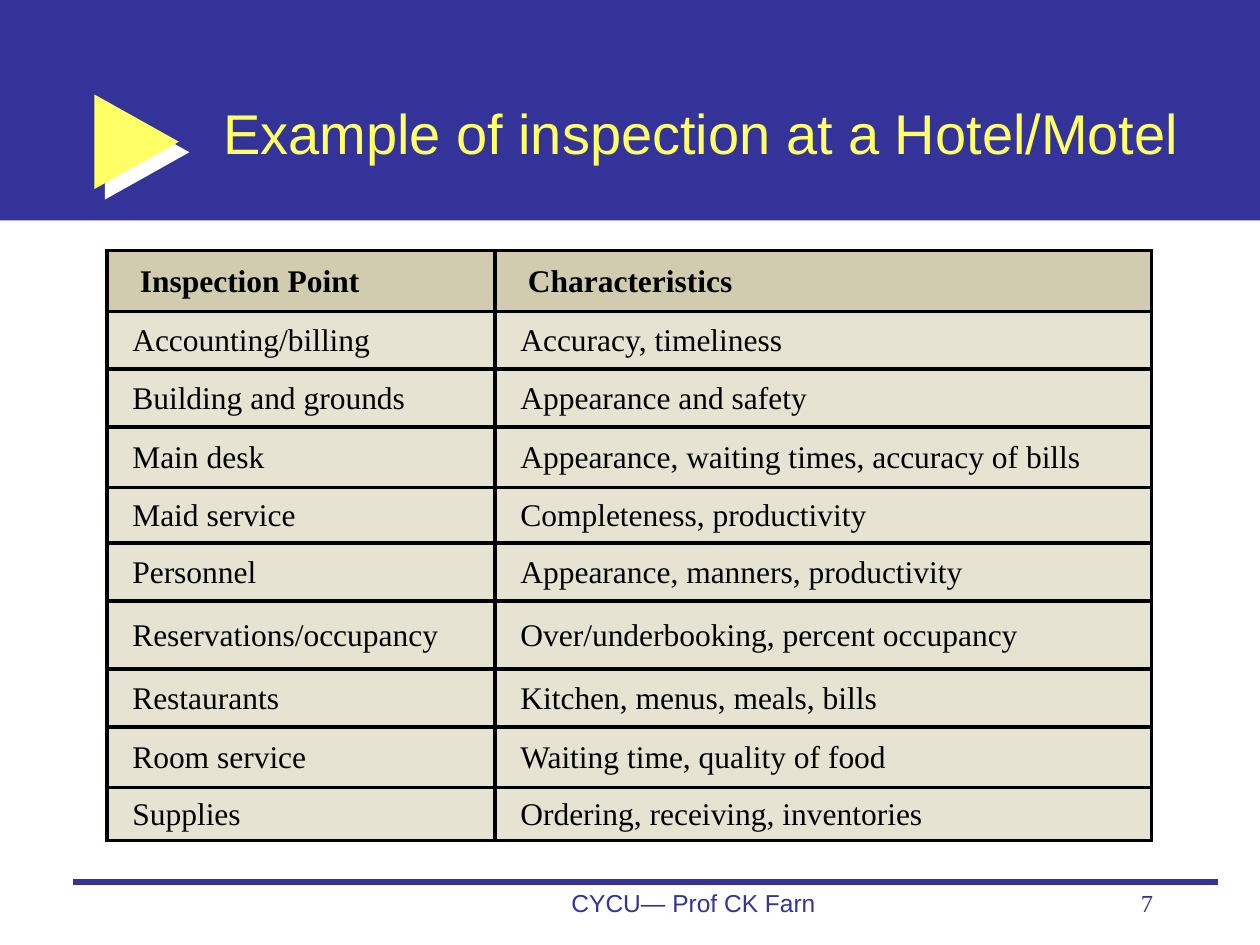
import pptx
import pptx.util
import pptx.dml.color
import pptx.enum.shapes
import pptx.enum.text
import pptx.oxml
import pptx.oxml.ns

Inches = pptx.util.Inches
Pt = pptx.util.Pt
Shape = pptx.enum.shapes.MSO_SHAPE
Align = pptx.enum.text.PP_ALIGN
Anchor = pptx.enum.text.MSO_ANCHOR

SANS, SERIF = "Arial", "Times New Roman"
COLORS = {
    "blue": "333399",
    "yellow": "FFFF66",
    "white": "FFFFFF",
    "black": "000000",
    "head": "D1CBAF",
    "body": "E6E3D2",
}
TITLE = "Example of inspection at a Hotel/Motel"
ROWS = [
    (0.48, "Inspection Point", "Characteristics"),
    (0.46, "Accounting/billing", "Accuracy, timeliness"),
    (0.46, "Building and grounds", "Appearance and safety"),
    (0.48, "Main desk", "Appearance, waiting times, accuracy of bills"),
    (0.44, "Maid service", "Completeness, productivity"),
    (0.46, "Personnel", "Appearance, manners, productivity"),
    (0.54, "Reservations/occupancy", "Over/underbooking, percent occupancy"),
    (0.46, "Restaurants", "Kitchen, menus, meals, bills"),
    (0.48, "Room service", "Waiting time, quality of food"),
    (0.42, "Supplies", "Ordering, receiving, inventories"),
]
COLS = (3.08, 5.21)
FOOTERS = [
    ("7", (7.17, 7, 2.08, 0.5), SERIF, Align.RIGHT),
    ("CYCU— Prof CK Farn", (3.92, 7, 3.17, 0.5), SANS, Align.CENTER),
]


def rgb(name):
    return pptx.dml.color.RGBColor.from_string(COLORS[name])


def box(nums):
    return [Inches(n) for n in nums]


def xml(tag, inner="", attrs=""):
    space = pptx.oxml.ns.nsdecls("a")
    return pptx.oxml.parse_xml(f"<a:{tag} {space} {attrs}>{inner}</a:{tag}>")


def tint(name):
    return f'<a:srgbClr val="{COLORS[name]}"/>'


def write(frame, text, size, font, color, bold=False, align=Align.LEFT, indent=0):
    frame.word_wrap = True
    para = frame.paragraphs[0]
    para.alignment = align
    if indent:
        props = para._p.get_or_add_pPr()
        props.set("marL", "0")
        props.set("indent", str(Inches(indent)))
    run = para.add_run()
    run.text = text
    run.font.size = Pt(size)
    run.font.name = font
    run.font.bold = bold
    run.font.color.rgb = rgb(color)


def add_solid(slide, kind, place, color):
    shape = slide.shapes.add_shape(kind, *box(place))
    shape.shadow.inherit = False
    shape.fill.solid()
    shape.fill.fore_color.rgb = rgb(color)
    shape.line.fill.background()
    return shape


def add_frame(slide):
    add_solid(slide, Shape.RECTANGLE, (0, 0, 10, 1.75), "blue")
    arrow = add_solid(slide, Shape.RIGHT_ARROW, (0.75, 0.75, 0.67, 0.75), "yellow")
    arrow.adjustments[0] = 0.38
    arrow.adjustments[1] = 1
    effects = arrow._element.spPr.find(pptx.oxml.ns.qn("a:effectLst"))
    attrs = f'dist="{Pt(8.5)}" dir="2700000" algn="ctr" rotWithShape="0"'
    effects.append(xml("outerShdw", tint("white"), attrs))
    rule = slide.shapes.add_connector(
        pptx.enum.shapes.MSO_CONNECTOR.STRAIGHT, *box((0.58, 7, 9.67, 7)))
    rule.line.color.rgb = rgb("blue")
    rule.line.width = Pt(3)
    rule._element.spPr.append(xml("effectLst"))


def add_title(slide):
    title = slide.shapes.title
    title.left, title.top, title.width, title.height = box((1.67, 0.42, 7.98, 1.25))
    title.text_frame.vertical_anchor = Anchor.MIDDLE
    write(title.text_frame, TITLE, 32, SANS, "yellow")
    slide.shapes[-1]._element.addnext(title._element)


def style(cell, fill):
    cell.vertical_anchor = Anchor.MIDDLE
    cell.margin_left = cell.margin_right = cell.margin_top = Inches(0.01)
    cell.margin_bottom = 0
    props = cell._tc.get_or_add_tcPr()
    for side in ("lnL", "lnR", "lnT", "lnB"):
        paint = f"<a:solidFill>{tint('black')}</a:solidFill>"
        props.append(xml(side, paint, f'w="{Pt(2.25)}"'))
    cell.fill.solid()
    cell.fill.fore_color.rgb = rgb(fill)


def add_grid(slide):
    high = sum(row[0] for row in ROWS)
    place = box((0.85, 1.99, sum(COLS), high))
    table = slide.shapes.add_table(len(ROWS), len(COLS), *place).table
    for col, width in zip(table.columns, COLS):
        col.width = Inches(width)
    for r, (height, *texts) in enumerate(ROWS):
        table.rows[r].height = Inches(height)
        head = r == 0
        for c, text in enumerate(texts):
            cell = table.cell(r, c)
            style(cell, "head" if head else "body")
            write(cell.text_frame, text, 18, SERIF, "black", bold=head,
                  indent=0.25 if head else 0.19)


def main():
    deck = pptx.Presentation()
    deck.slide_width, deck.slide_height = Inches(10), Inches(7.5)
    slide = deck.slides.add_slide(deck.slide_layouts[5])
    add_frame(slide)
    add_title(slide)
    add_grid(slide)
    for text, place, font, align in FOOTERS:
        frame = slide.shapes.add_textbox(*box(place)).text_frame
        write(frame, text, 14, font, "blue", align=align)
    deck.save("out.pptx")


if __name__ == "__main__":
    main()
